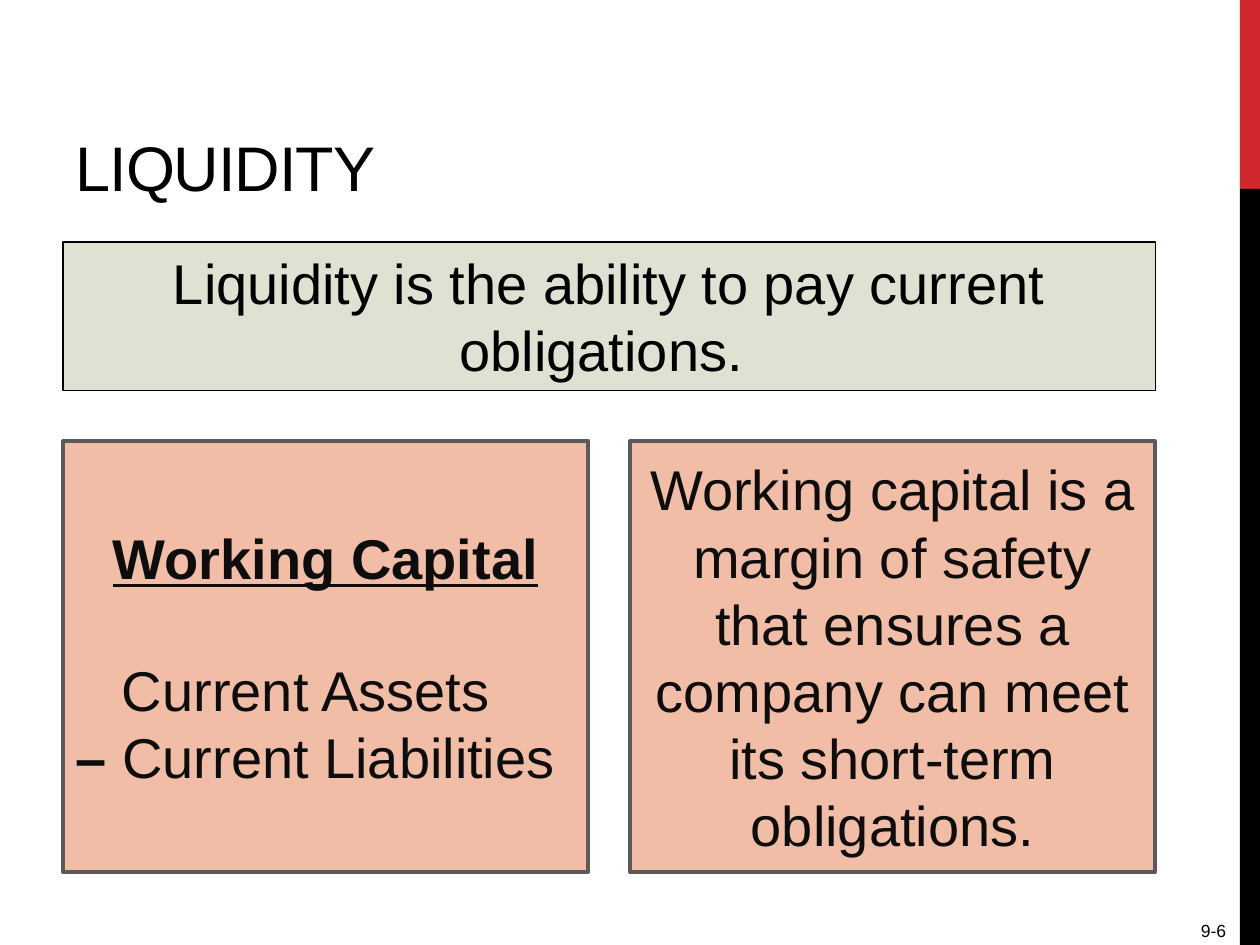
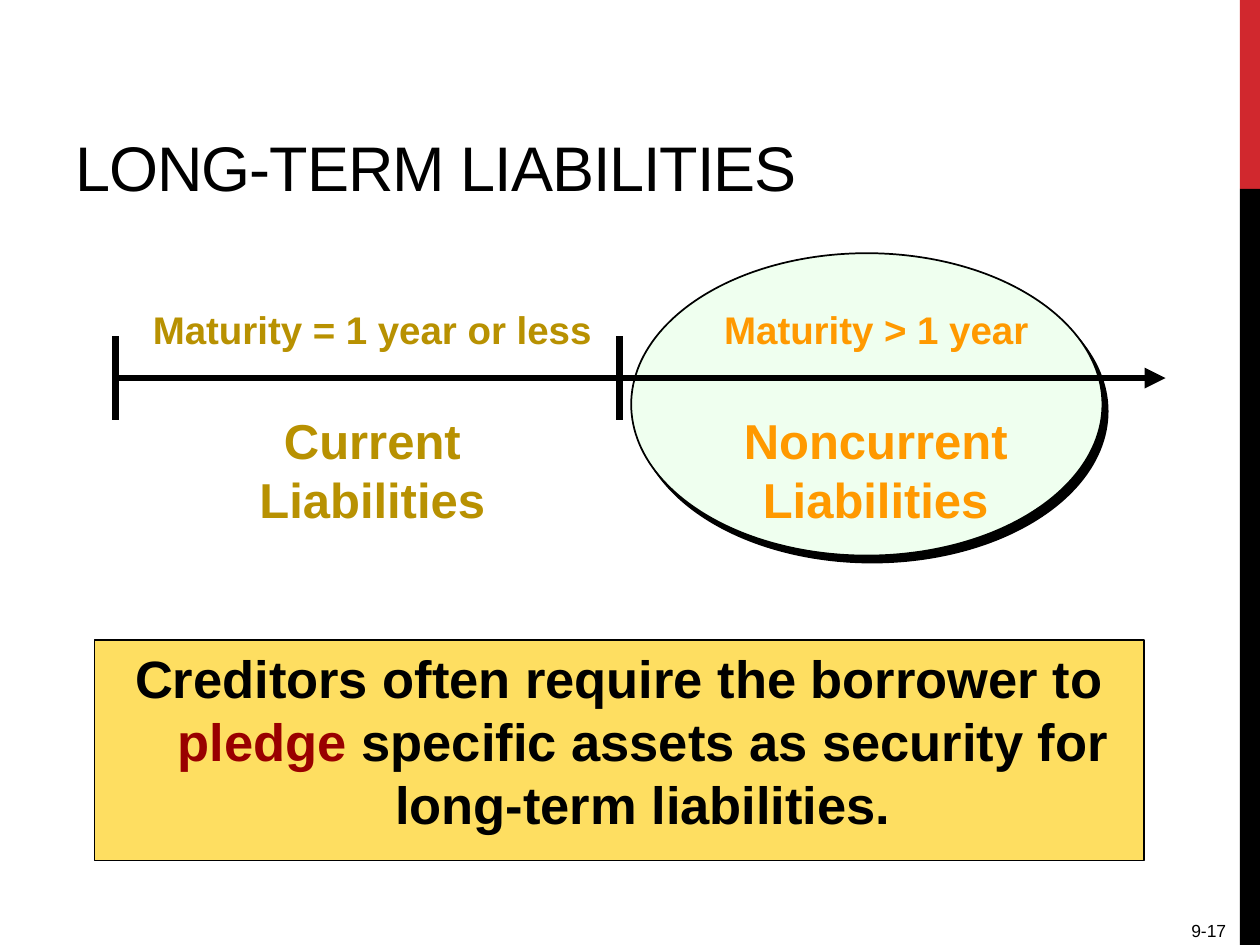
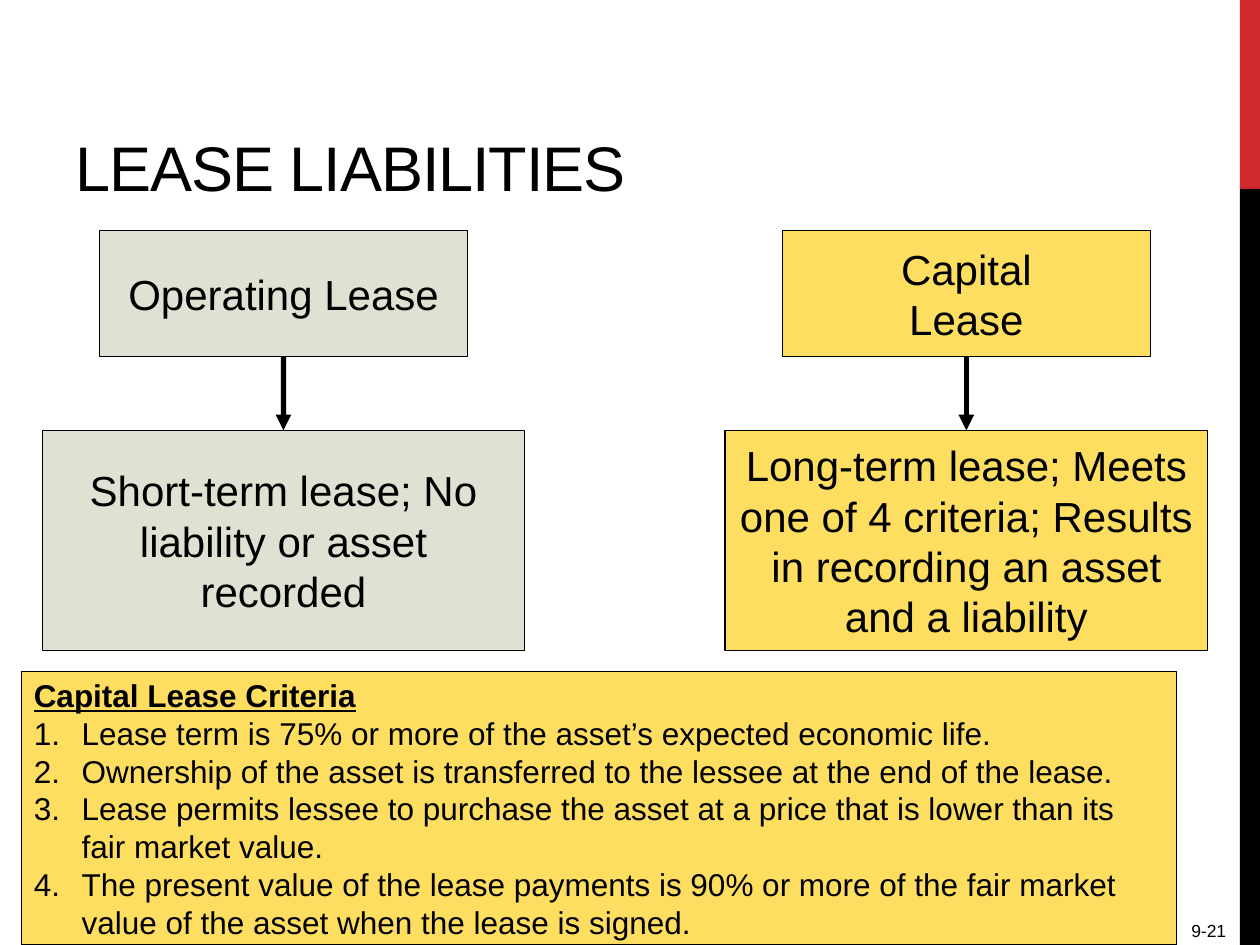
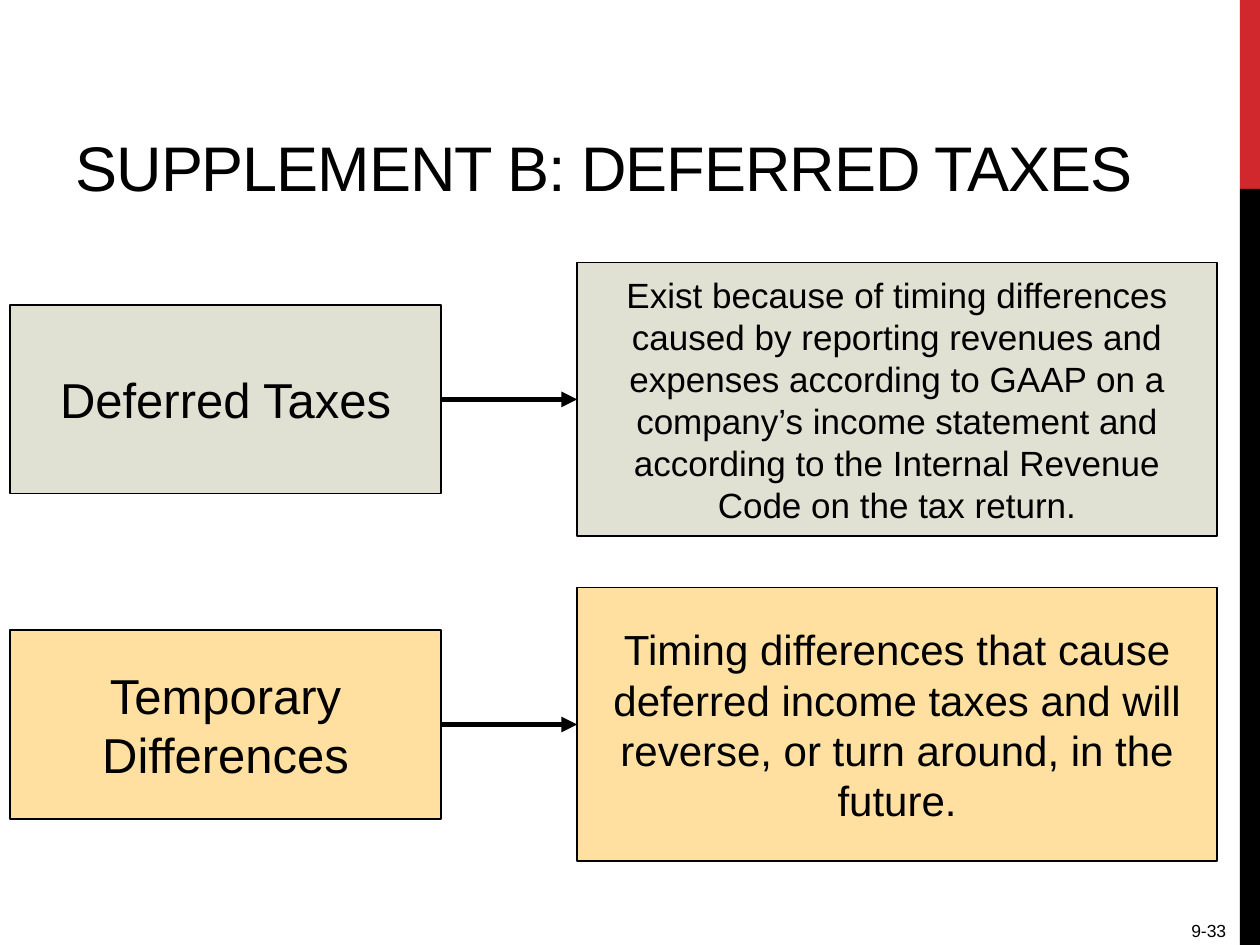
from dataclasses import dataclass, field

from lxml import etree
from pptx import Presentation
from pptx.dml.color import RGBColor
from pptx.enum.shapes import MSO_CONNECTOR, MSO_SHAPE
from pptx.enum.text import MSO_ANCHOR, MSO_AUTO_SIZE, PP_ALIGN
from pptx.oxml.ns import qn
from pptx.util import Inches, Pt

RECTANGLE, ELLIPSE = MSO_SHAPE.RECTANGLE, MSO_SHAPE.OVAL
STRAIGHT = MSO_CONNECTOR.STRAIGHT
TOP, MIDDLE, BOTTOM = MSO_ANCHOR.TOP, MSO_ANCHOR.MIDDLE, MSO_ANCHOR.BOTTOM
LEFT, CENTER, RIGHT = PP_ALIGN.LEFT, PP_ALIGN.CENTER, PP_ALIGN.RIGHT
NO_AUTOFIT = MSO_AUTO_SIZE.NONE
SIDE_TOP, SIDE_LEFT, SIDE_BOTTOM, SIDE_RIGHT = range(4)


@dataclass(frozen=True)
class Theme:
    font: str = "Arial"
    black: str = "000000"
    red: str = "D1282E"
    stone: str = "E1E1D3"
    yellow: str = "FEDE61"
    peach: str = "FFE0A1"
    salmon: str = "F1BDA7"
    mint: str = "EFFFEF"
    gray: str = "5A5A5A"
    ink: str = "0D0D0D"
    gold: str = "B89101"
    orange: str = "FF9900"
    maroon: str = "990000"
    title: int = 36
    statement: int = 32
    callout: int = 30
    heading: int = 28
    body: int = 24
    label: int = 22
    detail: int = 20
    listing: int = 18
    footer: int = 10


THEME = Theme()


@dataclass
class Text:
    runs: list
    align: int = CENTER
    margin: float = 0
    indent: float = 0
    before: float = 0
    numbered: bool = False


@dataclass
class Style:
    size: int
    color: str = THEME.black
    bold: bool = False
    anchor: int = MIDDLE
    fill: str = None
    line: str = THEME.black
    width: float = 0.75
    extra: dict = field(default_factory=dict)


BOLD = {"bold": True}
HEADING = {"bold": True, "underline": True}
HANG = 0.38

LIQUIDITY = {
    "title": "LIQUIDITY",
    "number": "9-6",
    "definition": [Text([("Liquidity is the ability to pay current obligations. ", {})])],
    "panels": [
        [
            Text([("Working Capital", HEADING)]),
            Text([("Current Assets", {})], LEFT, margin=0.37, before=37),
            Text([("– ", BOLD), ("Current Liabilities", {})], LEFT, margin=0.37, indent=-0.37),
        ],
        [Text([("Working capital is a margin of safety that ensures a company can meet "
                "its short-term obligations.", {})])],
    ],
}

LONG_TERM = {
    "title": "LONG-TERM LIABILITIES",
    "number": "9-17",
    "pledge": [Text([
        ("Creditors often require the borrower to ", {}),
        ("pledge", {"color": THEME.maroon}),
        (" specific assets as security for long-term liabilities.", {}),
    ], margin=HANG, indent=-HANG)],
    "labels": [
        ("Maturity = 1 year or less", (1.08, 2.38, 3.75, 0.47), THEME.label, THEME.gold),
        ("Maturity > 1 year", (5.08, 2.38, 3.75, 0.47), THEME.label, THEME.orange),
        ("Current Liabilities", (1.25, 3.21, 3.41, 1.03), THEME.heading, THEME.gold),
        ("Noncurrent Liabilities", (5.16, 3.21, 3.58, 1.03), THEME.heading, THEME.orange),
    ],
}

LEASES = {
    "title": "LEASE LIABILITIES",
    "number": "9-21",
    "columns": [
        (2.25, THEME.stone, "Operating Lease",
         "Short-term lease; No liability or asset recorded"),
        (7.67, THEME.yellow, "Capital\nLease",
         "Long-term lease; Meets one of 4 criteria; Results in recording an asset and a liability"),
    ],
    "criteria_title": "Capital Lease Criteria",
    "criteria": [
        "Lease term is 75% or more of the asset’s expected economic life.",
        "Ownership of the asset is transferred to the lessee at the end of the lease.",
        "Lease permits lessee to purchase the asset at a price that is lower than its "
        "fair market value.",
        "The present value of the lease payments is 90% or more of the fair market value "
        "of the asset when the lease is signed.",
    ],
}

DEFERRED_TAXES = {
    "title": "SUPPLEMENT B: DEFERRED TAXES",
    "number": "9-33",
    "rows": [
        (3.17, THEME.stone, "Deferred Taxes", THEME.detail,
         "Exist because of timing differences caused by reporting revenues and expenses "
         "according to GAAP on a company’s income statement and according to the Internal "
         "Revenue Code on the tax return."),
        (5.75, THEME.peach, "Temporary Differences", THEME.body,
         "Timing differences that cause deferred income taxes and will reverse, or turn "
         "around, in the future."),
    ],
}


def rgb(color):
    return RGBColor.from_string(color)


def inches(values):
    return [Inches(value) for value in values]


def plain(text, align=CENTER):
    return [Text([(text, {})], align)]


def centered(center_x, center_y, width, height):
    return center_x - width / 2, center_y - height / 2, width, height


def add_run(paragraph, text, style, color=None, bold=None, underline=False):
    for index, piece in enumerate(text.split("\n")):
        if index:
            paragraph.add_line_break()
        run = paragraph.add_run()
        run.text = piece
        run.font.name = THEME.font
        run.font.size = Pt(style.size)
        run.font.bold = style.bold if bold is None else bold
        run.font.underline = underline
        run.font.color.rgb = rgb(color or style.color)
        for name, value in style.extra.items():
            run.font._element.set(name, value)


def write_text(shape, texts, style):
    frame = shape.text_frame
    frame.word_wrap = True
    frame.auto_size = NO_AUTOFIT
    frame.vertical_anchor = style.anchor
    for index, text in enumerate(texts):
        paragraph = frame.add_paragraph() if index else frame.paragraphs[0]
        paragraph.alignment = text.align
        paragraph.space_before = Pt(text.before)
        properties = paragraph._p.get_or_add_pPr()
        properties.set("marL", str(Inches(text.margin)))
        properties.set("indent", str(Inches(text.indent)))
        if text.numbered:
            etree.SubElement(properties, qn("a:buAutoNum"), type="arabicPeriod")
        for content, changes in text.runs:
            add_run(paragraph, content, style, **changes)


def add_box(slide, place, style, texts=(), kind=RECTANGLE):
    shape = slide.shapes.add_shape(kind, *inches(place))
    shape.shadow.inherit = False
    shape.fill.solid()
    shape.fill.fore_color.rgb = rgb(style.fill)
    if style.line:
        shape.line.color.rgb = rgb(style.line)
        shape.line.width = Pt(style.width)
    else:
        shape.line.fill.background()
    if texts:
        write_text(shape, texts, style)
    return shape


def add_label(slide, place, style, texts):
    write_text(slide.shapes.add_textbox(*inches(place)), texts, style)


def add_line(slide, start, end, width, arrow=False):
    connector = slide.shapes.add_connector(STRAIGHT, *inches((*start, *end)))
    connector.line.color.rgb = rgb(THEME.black)
    connector.line.width = Pt(width)
    properties = connector._element.spPr
    if arrow:
        etree.SubElement(properties.find(qn("a:ln")), qn("a:tailEnd"), type="triangle")
    etree.SubElement(properties, qn("a:effectLst"))
    return connector


def join_boxes(slide, first, first_side, second, second_side):
    connector = add_line(slide, (0, 0), (1, 1), 3, arrow=True)
    connector.begin_connect(first, first_side)
    connector.end_connect(second, second_side)


def add_hard_shadow(shape):
    effects = shape._element.spPr.find(qn("a:effectLst"))
    shadow = etree.SubElement(effects, qn("a:outerShdw"), blurRad="0", dist=str(Pt(5)),
                              dir=str(53 * 60000), algn="ctr", rotWithShape="0")
    etree.SubElement(shadow, qn("a:srgbClr"), val=THEME.black)


def start_slide(presentation, content):
    slide = presentation.slides.add_slide(presentation.slide_layouts[5])
    for top, height, color in ((0, 1.5, THEME.red), (1.5, 6, THEME.black)):
        add_box(slide, (9.84, top, 0.16, height), Style(THEME.footer, fill=color, line=None))
    add_label(slide, (8.75, 7.25, 1.08, 0.27), Style(THEME.footer, anchor=TOP),
              plain(content["number"], RIGHT))
    title = slide.shapes.title
    title.left, title.top, title.width, title.height = inches((0.5, 0.17, 9.17, 1.5))
    write_text(title, plain(content["title"], LEFT),
               Style(THEME.title, anchor=BOTTOM, extra={"spc": "-60"}))
    return slide


def build_liquidity(presentation, content):
    slide = start_slide(presentation, content)
    add_box(slide, (0.5, 1.92, 8.67, 1.18),
            Style(THEME.statement, anchor=TOP, fill=THEME.stone), content["definition"])
    panel_style = Style(THEME.statement, THEME.ink, fill=THEME.salmon,
                        line=THEME.gray, width=2.25)
    for index, texts in enumerate(content["panels"]):
        add_box(slide, (0.5 + 4.5 * index, 3.5, 4.17, 3.42), panel_style, texts)


def build_long_term(presentation, content):
    slide = start_slide(presentation, content)
    add_box(slide, (0.75, 5.08, 8.33, 1.75),
            Style(THEME.callout, bold=True, anchor=TOP, fill=THEME.yellow, width=1),
            content["pledge"])
    highlight = add_box(slide, (5.01, 2.01, 3.74, 2.4),
                        Style(THEME.label, fill=THEME.mint, width=1), kind=ELLIPSE)
    add_hard_shadow(highlight)
    timeline_y = 3
    add_line(slide, (0.92, timeline_y), (9.25, timeline_y), 4, arrow=True)
    for tick_x in (0.92, 4.92):
        add_line(slide, (tick_x, timeline_y - 0.33), (tick_x, timeline_y + 0.33), 4)
    for text, place, size, color in content["labels"]:
        add_label(slide, place, Style(size, color, bold=True, anchor=TOP), plain(text))


def build_leases(presentation, content):
    slide = start_slide(presentation, content)
    for center_x, fill, name, meaning in content["columns"]:
        style = Style(THEME.body, fill=fill)
        lease = add_box(slide, centered(center_x, 2.33, 2.92, 1), style, plain(name))
        result = add_box(slide, centered(center_x, 4.29, 3.83, 1.75), style, plain(meaning))
        join_boxes(slide, lease, SIDE_BOTTOM, result, SIDE_TOP)
    criteria = [Text([(content["criteria_title"], HEADING)], LEFT, HANG, -HANG)]
    criteria += [Text([(criterion, {})], LEFT, HANG, -HANG, numbered=True)
                 for criterion in content["criteria"]]
    add_box(slide, (0.17, 5.33, 9.17, 2.17),
            Style(THEME.listing, fill=THEME.yellow), criteria)


def build_deferred_taxes(presentation, content):
    slide = start_slide(presentation, content)
    for center_y, fill, name, size, meaning in content["rows"]:
        term = add_box(slide, centered(1.79, center_y, 3.42, 1.5),
                       Style(THEME.heading, fill=fill), plain(name))
        explanation = add_box(slide, centered(7.12, center_y, 5.08, 2.17),
                              Style(size, fill=fill), plain(meaning))
        join_boxes(slide, term, SIDE_RIGHT, explanation, SIDE_LEFT)


def main():
    presentation = Presentation()
    presentation.slide_width, presentation.slide_height = Inches(10), Inches(7.5)
    build_liquidity(presentation, LIQUIDITY)
    build_long_term(presentation, LONG_TERM)
    build_leases(presentation, LEASES)
    build_deferred_taxes(presentation, DEFERRED_TAXES)
    presentation.save("out.pptx")


if __name__ == "__main__":
    main()
